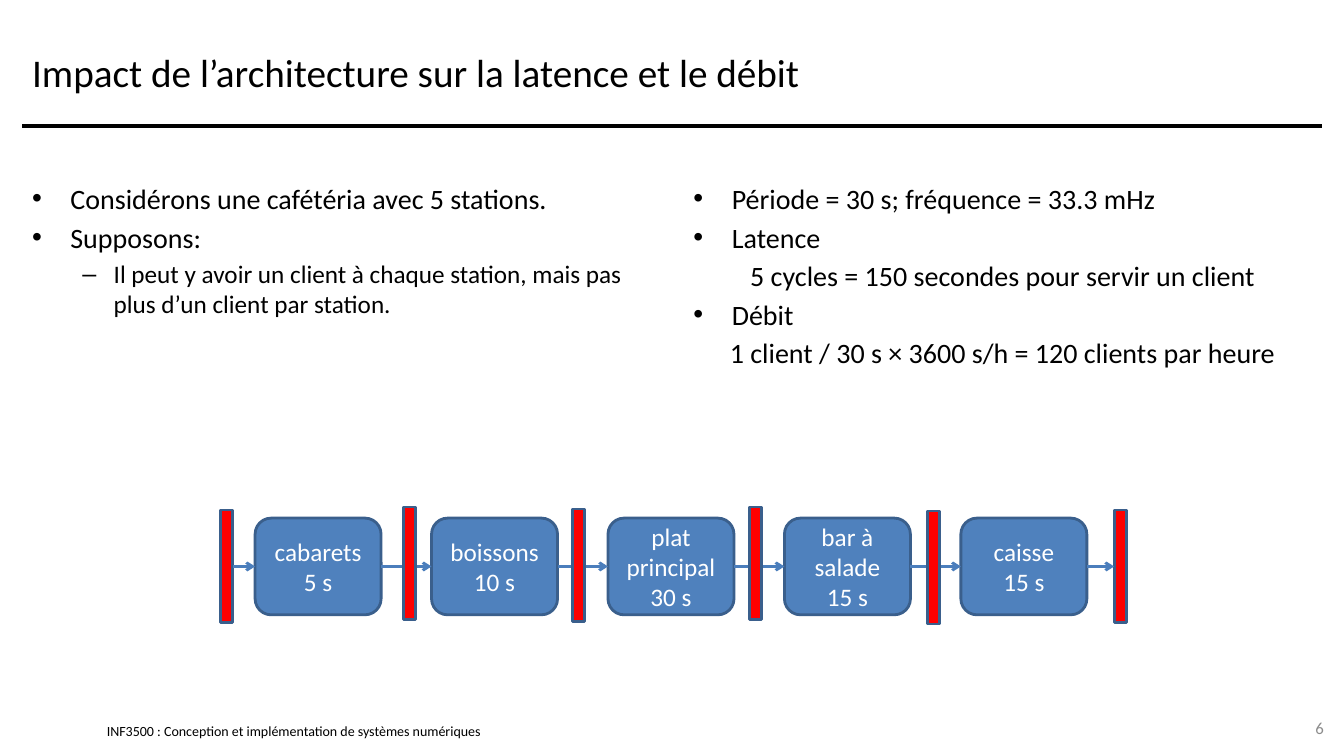
import pptx
import pptx.util
import pptx.dml.color
import pptx.enum.shapes
import pptx.enum.text
import pptx.oxml.ns
from lxml import etree

Inches = pptx.util.Inches
Pt = pptx.util.Pt
RGBColor = pptx.dml.color.RGBColor
MSO_SHAPE = pptx.enum.shapes.MSO_SHAPE
ALIGN = pptx.enum.text.PP_ALIGN
ANCHOR = pptx.enum.text.MSO_ANCHOR
qn = pptx.oxml.ns.qn

BLACK = RGBColor(0x00, 0x00, 0x00)
WHITE = RGBColor(0xFF, 0xFF, 0xFF)
GRAY = RGBColor(0x8C, 0x8C, 0x8C)
BLUE = RGBColor(0x4F, 0x81, 0xBD)
DARK_BLUE = RGBColor(0x3A, 0x5F, 0x8C)
ARROW_BLUE = RGBColor(0x4B, 0x7E, 0xBC)
RED = RGBColor(0xFF, 0x00, 0x00)

BULLETS = {"•": (0.38, 0.38, 20), "–": (0.81, 0.31, 18)}


class Deck:
    font = "Calibri"

    def __init__(self, width, height):
        self.prs = pptx.Presentation()
        self.prs.slide_width = Inches(width)
        self.prs.slide_height = Inches(height)
        self.s = self.prs.slides.add_slide(self.prs.slide_layouts[6])

    def run(self, p, text, size, color):
        r = p.add_run()
        r.text = text
        r.font.name = self.font
        r.font.size = Pt(size)
        r.font.color.rgb = color

    def box(self, x, y, w, h, anchor=ANCHOR.MIDDLE):
        tf = self.s.shapes.add_textbox(Inches(x), Inches(y), Inches(w), Inches(h)).text_frame
        tf.word_wrap = True
        tf.vertical_anchor = anchor
        return tf

    def label(self, x, y, w, h, text, size, color=BLACK, align=ALIGN.LEFT, inset=None):
        tf = self.box(x, y, w, h)
        if inset is not None:
            tf.margin_left = tf.margin_right = Inches(inset)
            tf.margin_top = tf.margin_bottom = Inches(inset)
        p = tf.paragraphs[0]
        p.alignment = align
        self.run(p, text, size, color)

    def body(self, x, y, w, h, items):
        tf = self.box(x, y, w, h, ANCHOR.TOP)
        for i, (bullet, text) in enumerate(items):
            p = tf.add_paragraph() if i else tf.paragraphs[0]
            size = 20
            if bullet:
                left, hanging, size = BULLETS[bullet]
                pPr = p._p.get_or_add_pPr()
                pPr.set("marL", str(Inches(left)))
                pPr.set("indent", str(-Inches(hanging)))
                etree.SubElement(pPr, qn("a:buFont")).set("typeface", "Arial")
                etree.SubElement(pPr, qn("a:buChar")).set("char", bullet)
            else:
                p.alignment = ALIGN.CENTER
            if i:
                p.space_before = Pt(size * 0.18)
            self.run(p, text, size, BLACK)

    def shape(self, kind, x, y, w, h, fill, lines=()):
        sp = self.s.shapes.add_shape(kind, Inches(x), Inches(y), Inches(w), Inches(h))
        sp.shadow.inherit = False
        sp.fill.solid()
        sp.fill.fore_color.rgb = fill
        sp.line.color.rgb = DARK_BLUE
        sp.line.width = Pt(2)
        tf = sp.text_frame
        tf.word_wrap = True
        tf.vertical_anchor = ANCHOR.MIDDLE
        for i, text in enumerate(lines):
            p = tf.add_paragraph() if i else tf.paragraphs[0]
            p.alignment = ALIGN.CENTER
            self.run(p, text, 18, WHITE)
        return sp

    def line(self, x1, y1, x2, y2, color, width):
        cx = self.s.shapes.add_connector(
            pptx.enum.shapes.MSO_CONNECTOR.STRAIGHT,
            Inches(x1), Inches(y1), Inches(x2), Inches(y2))
        cx.line.color.rgb = color
        cx.line.width = Pt(width)
        etree.SubElement(cx._element.spPr, qn("a:effectLst"))
        return cx

    def arrow(self, start, end):
        cx = self.line(0, 0, 1, 1, ARROW_BLUE, 2)
        cx.begin_connect(start, 3)
        cx.end_connect(end, 1)
        etree.SubElement(cx.line._get_or_add_ln(), qn("a:tailEnd")).set("type", "arrow")

    def register(self, x, y):
        return self.shape(MSO_SHAPE.RECTANGLE, x, y, 0.12, 1.12, RED)


def main():
    deck = Deck(13.33, 7.5)
    deck.label(1.06, 7.17, 5.11, 0.17,
               "INF3500 : Conception et implémentation de systèmes numériques", 10, inset=0)
    deck.line(0.22, 1.25, 13.11, 1.25, BLACK, 3)
    deck.label(0.22, 0.17, 12.89, 1.08,
               "Impact de l’architecture sur la latence et le débit", 28)
    deck.body(0.22, 1.75, 6.33, 5.08, [
        ("•", "Considérons une cafétéria avec 5 stations."),
        ("•", "Supposons:"),
        ("–", "Il peut y avoir un client à chaque station, mais pas plus d’un client par station."),
    ])
    deck.body(6.78, 1.75, 6.33, 5.08, [
        ("•", "Période = 30 s; fréquence = 33.3 mHz"),
        ("•", "Latence"),
        ("", "5 cycles = 150 secondes pour servir un client"),
        ("•", "Débit"),
        ("", "1 client / 30 s × 3600 s/h = 120 clients par heure"),
    ])
    deck.label(12.56, 7.02, 0.67, 0.4, "6", 12, GRAY, ALIGN.RIGHT)

    stations = [("cabarets", "5 s"), ("boissons", "10 s"), ("plat principal", "30 s"),
                ("bar à salade", "15 s"), ("caisse", "15 s")]
    chain = [deck.shape(MSO_SHAPE.ROUNDED_RECTANGLE, 2.53 + 1.75 * i, 5.14, 1.25, 0.96, BLUE, lines)
             for i, lines in enumerate(stations)]
    chain = [deck.register(2.19, 5.06), *chain, deck.register(11.05, 5.06)]
    for start, end in zip(chain, chain[1:]):
        deck.arrow(start, end)
    for x, y in [(4, 5.03), (5.68, 5.05), (7.43, 5.03), (9.2, 5.07)]:
        deck.register(x, y)

    deck.prs.save("out.pptx")


if __name__ == "__main__":
    main()
